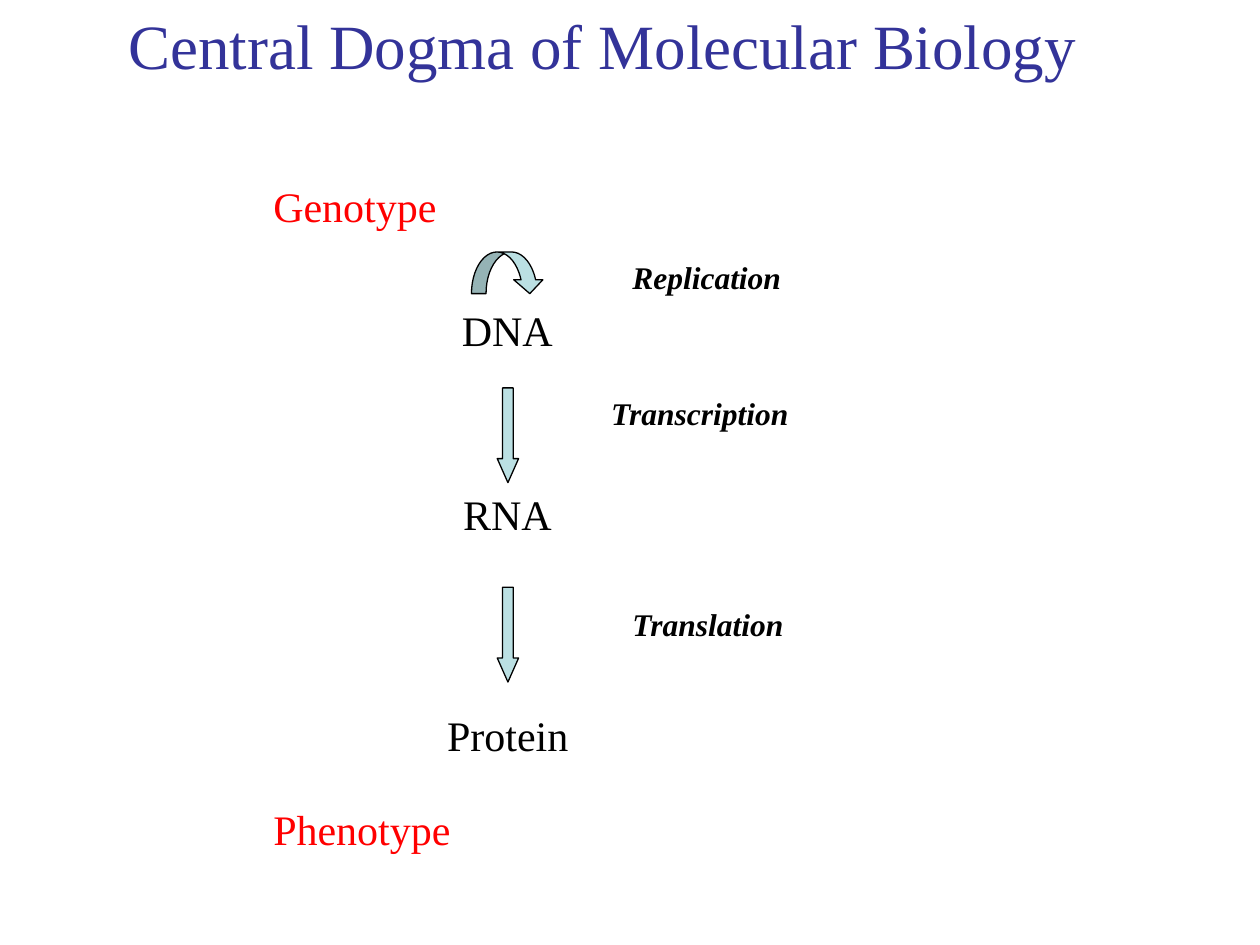
from pptx import Presentation
from pptx import util as u
from pptx.dml.color import RGBColor
from pptx.enum import shapes, text

prs = Presentation()
prs.slide_width, prs.slide_height = u.Cm(25.4), u.Cm(19.05)
s = prs.slides.add_slide(prs.slide_layouts[6])


def rgb(color):
    return RGBColor.from_string(color)


def add_text(words, x, y, w, h=1.27, size=24, color="000000", bold=False, italic=False):
    tf = s.shapes.add_textbox(u.Cm(x), u.Cm(y), u.Cm(w), u.Cm(h)).text_frame
    tf.word_wrap = False
    tf.auto_size = text.MSO_AUTO_SIZE.SHAPE_TO_FIT_TEXT
    r = tf.paragraphs[0].add_run()
    r.text = words
    r.font.name = "Times New Roman"
    r.font.size = u.Pt(size)
    r.font.bold, r.font.italic = bold, italic
    r.font.color.rgb = rgb(color)


# Title
add_text("Central Dogma of Molecular Biology", 2.34, 0, 19.63, 1.78, size=36, color="333399")

# Molecules, centred on one axis
axis = 10.24
for words, y, w in [("DNA", 6.02, 2.36), ("RNA", 9.73, 2.31), ("Protein", 14.17, 2.95)]:
    add_text(words, axis - w / 2, y, w)

# Arrows on the same axis
curved, down = shapes.MSO_SHAPE.CURVED_DOWN_ARROW, shapes.MSO_SHAPE.DOWN_ARROW
for kind, y, w, h, adjustments in [
    (curved, 5.08, 1.47, 0.84, (0.35, 0.7, 0.333)),
    (down, 7.82, 0.43, 1.91, (0.5, 1.125)),
    (down, 11.84, 0.43, 1.91, (0.5, 1.125)),
]:
    sp = s.shapes.add_shape(kind, u.Cm(axis - w / 2), u.Cm(y), u.Cm(w), u.Cm(h))
    for i, value in enumerate(adjustments):
        sp.adjustments[i] = value
    sp.shadow.inherit = False
    sp.fill.solid()
    sp.fill.fore_color.rgb = rgb("BBE0E3")
    sp.line.color.rgb = rgb("000000")
    sp.line.width = u.Pt(0.75)

# Processes
for words, x, y, w in [
    ("Replication", 12.5, 5.08, 3.51),
    ("Transcription", 12.07, 7.82, 4.11),
    ("Translation", 12.5, 12.07, 3.58),
]:
    add_text(words, x, y, w, 1.02, size=18, bold=True, italic=True)

# Start and end of the chain
for words, y, w in [("Genotype", 3.51, 3.81), ("Phenotype", 16.08, 4.09)]:
    add_text(words, 5.26, y, w, color="FF0000")

prs.save("out.pptx")
